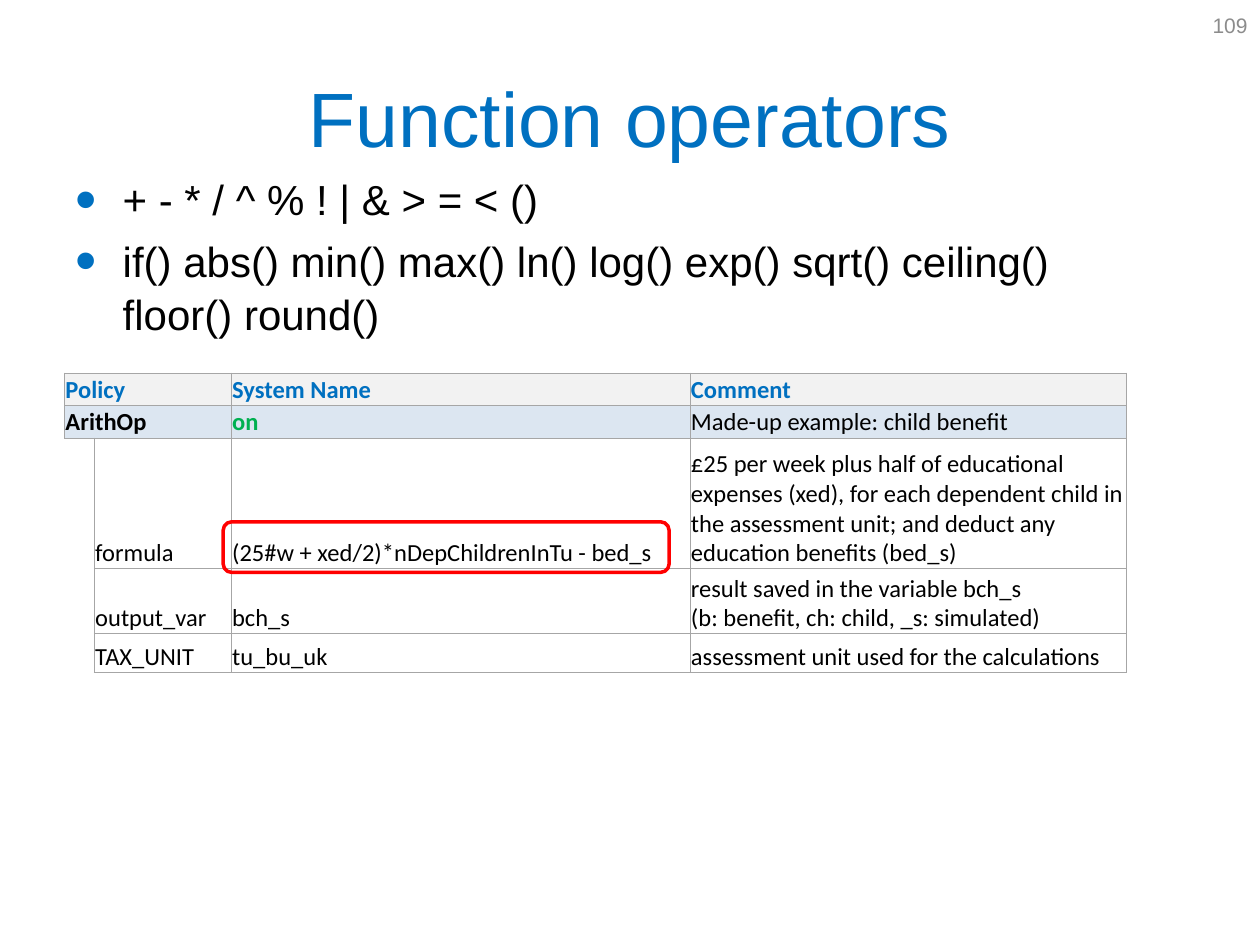
from dataclasses import dataclass
from lxml import etree
from pptx import Presentation
from pptx.dml.color import RGBColor
from pptx.enum import shapes, text
from pptx.oxml import ns
from pptx.util import Cm, Pt

# Content
TITLE = "Function operators"
NUMBER = "109"
POINTS = [
    "+ - * / ^ % ! | & > = < ()",
    "if() abs() min() max() ln() log() exp() sqrt() ceiling() floor() round()",
]
# Heading rows span the first two columns
ROWS = [
    ("Policy", "", "System Name", "Comment"),
    ("ArithOp", "", "on", "Made-up example: child benefit"),
    ("", "formula", "(25#w + xed/2)*nDepChildrenInTu - bed_s",
     "£25 per week plus half of educational expenses (xed), for each dependent "
     "child in the assessment unit; and deduct any education benefits (bed_s)"),
    ("", "output_var", "bch_s",
     "result saved in the variable bch_s \v(b: benefit, ch: child, _s: simulated)"),
    ("", "TAX_UNIT", "tu_bu_uk", "assessment unit used for the calculations"),
]
WIDTHS = [0.6, 2.76, 9.25, 8.8]
HEIGHTS = [0.65, 0.66, 2.63, 1.31, 0.65]


@dataclass(frozen=True)
class Theme:
    blue: str = "0070C0"
    green: str = "00B050"
    black: str = "000000"
    red: str = "FF0000"
    gray: str = "8C8C8C"
    rule: str = "A6A6A6"
    head: str = "F2F2F2"
    band: str = "DCE6F1"
    white: str = "FFFFFF"
    sans: str = "Arial"
    grid: str = "Calibri"
    title: int = 44
    body: int = 24
    cell: int = 14
    small: int = 12


T = Theme()


def place(shape, *box):
    shape.left, shape.top, shape.width, shape.height = map(Cm, box)


def style(para, face, size, color, bold=False):
    for run in para.runs:
        font = run.font
        font.name, font.size, font.bold = face, Pt(size), bold
        font.color.rgb = RGBColor.from_string(color)


def add(parent, tag, **attrs):
    return etree.SubElement(parent, ns.qn(tag), attrs)


def bullet(para):
    props = para._p.get_or_add_pPr()
    props.set("marL", str(Cm(0.95)))
    props.set("indent", str(Cm(-0.95)))
    add(add(props, "a:buClr"), "a:srgbClr", val=T.blue)
    add(props, "a:buSzPct", val="145000")
    add(props, "a:buFont", typeface=T.sans)
    add(props, "a:buChar", char="•")


def border(cell, sides):
    props = cell._tc.get_or_add_tcPr()
    for side in "LRTB":
        line = add(props, "a:ln" + side, w=str(Pt(0.5)))
        if side in sides:
            add(add(line, "a:solidFill"), "a:srgbClr", val=T.rule)
        else:
            add(line, "a:noFill")


def look(row, col):
    """Text colour, boldness and fill of a cell."""
    if row == 0:
        return T.blue, True, T.head
    if row == 1:
        return (T.green if col == 2 else T.black), col < 3, T.band
    return T.black, False, (T.white if col == 0 else None)


deck = Presentation()
deck.slide_width, deck.slide_height = Cm(25.4), Cm(19.05)
slide = deck.slides.add_slide(deck.slide_layouts[1])

# Title
head = slide.shapes.title
place(head, 1.27, 0.76, 22.86, 3.18)
head.text_frame.text = TITLE
head.text_frame.vertical_anchor = text.MSO_ANCHOR.MIDDLE
para = head.text_frame.paragraphs[0]
para.alignment = text.PP_ALIGN.CENTER
style(para, T.sans, T.title, T.blue)

# Bullet list
body = slide.placeholders[1]
place(body, 1.27, 3.33, 22.43, 13.79)
frame = body.text_frame
frame.text = "\n".join(POINTS)
frame.auto_size = text.MSO_AUTO_SIZE.NONE
for i, para in enumerate(frame.paragraphs):
    bullet(para)
    para.line_spacing = 1.05
    para.space_before = Pt(5 if i else 0)
    style(para, T.sans, T.body, T.black)

# Page number
page = slide.shapes.add_textbox(Cm(19.48), 0, Cm(5.92), Cm(1.02))
page.text_frame.word_wrap = True
page.text_frame.text = NUMBER
page.text_frame.vertical_anchor = text.MSO_ANCHOR.MIDDLE
para = page.text_frame.paragraphs[0]
para.alignment = text.PP_ALIGN.RIGHT
style(para, T.sans, T.small, T.gray)

# Table
table = slide.shapes.add_table(
    len(ROWS), len(WIDTHS), Cm(1.3), Cm(7.52),
    Cm(sum(WIDTHS)), Cm(sum(HEIGHTS))).table
table.first_row = table.horz_banding = False
for col, width in zip(table.columns, WIDTHS):
    col.width = Cm(width)
for row, height in zip(table.rows, HEIGHTS):
    row.height = Cm(height)

for r, words in enumerate(ROWS):
    for c, word in enumerate(words):
        cell = table.cell(r, c)
        color, bold, fill = look(r, c)
        cell.margin_left = cell.margin_right = cell.margin_top = Cm(0.02)
        cell.margin_bottom = 0
        cell.vertical_anchor = (
            text.MSO_ANCHOR.MIDDLE if r < 2 else text.MSO_ANCHOR.BOTTOM)
        if r < 2 or c:
            border(cell, "LRTB")
        else:
            border(cell, "RT" if r == 2 else "R")
        if fill:
            cell.fill.solid()
            cell.fill.fore_color.rgb = RGBColor.from_string(fill)
        else:
            cell.fill.background()
        if word:
            cell.text_frame.text = word
            style(cell.text_frame.paragraphs[0], T.grid, T.cell, color, bold)
for r in range(2):
    table.cell(r, 0).merge(table.cell(r, 1))

# Frame around the formula
mark = slide.shapes.add_shape(
    shapes.MSO_SHAPE.ROUNDED_RECTANGLE, Cm(4.5), Cm(10.52), Cm(8.99), Cm(1.02))
mark.shadow.inherit = False
mark.fill.background()
mark.line.color.rgb = RGBColor.from_string(T.red)
mark.line.width = Pt(2)

deck.save("out.pptx")
